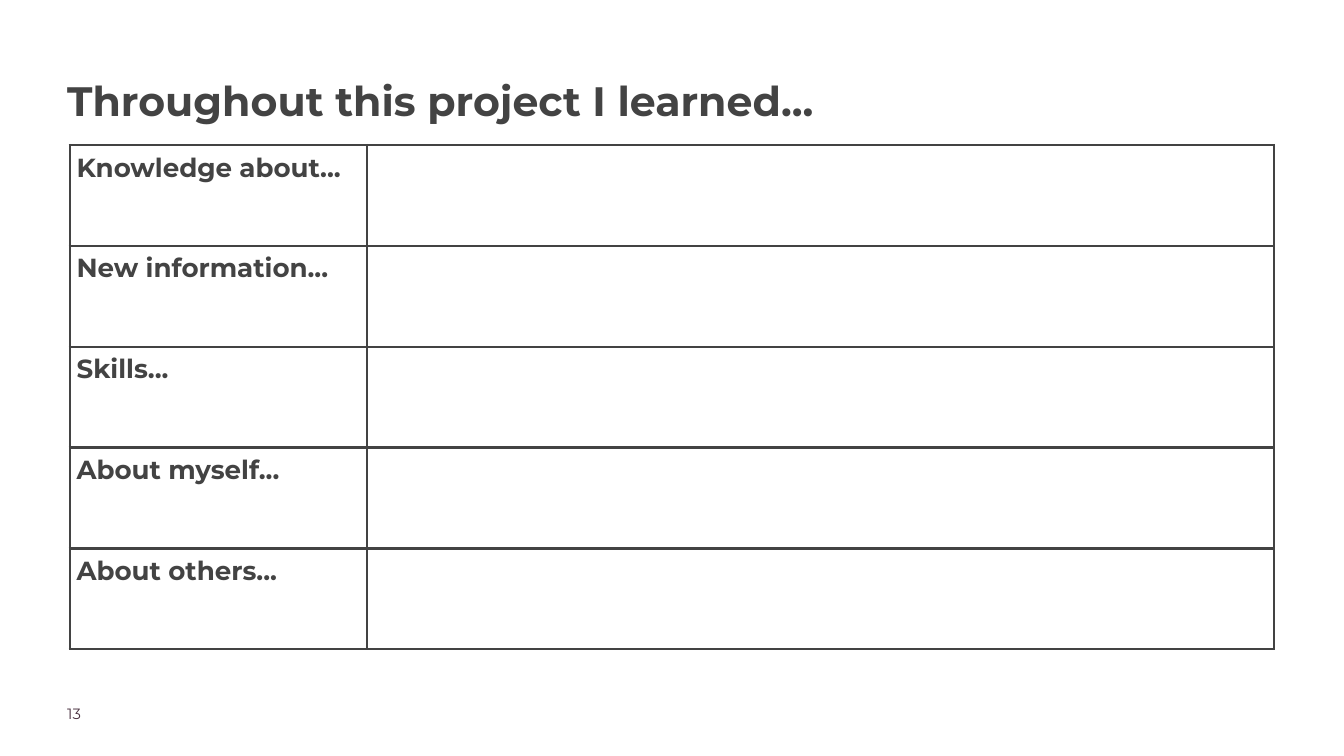
from dataclasses import dataclass

from lxml import etree
from pptx import Presentation
from pptx.dml.color import RGBColor
from pptx.enum.text import MSO_ANCHOR, PP_ALIGN
from pptx.oxml.ns import qn
from pptx.util import Inches, Pt

LEFT = PP_ALIGN.LEFT
TOP = MSO_ANCHOR.TOP
MIDDLE = MSO_ANCHOR.MIDDLE
FACE = "Montserrat"
GREY = "434343"
PLUM = "4B3241"
TOPICS = [
    "Knowledge about...",
    "New information...",
    "Skills...",
    "About myself...",
    "About others...",
]
COLS = [4.42, 13.5]
ROW = 1.5


@dataclass
class Style:
    size: float
    color: str
    bold: bool = False


HEAD = Style(44, GREY, True)
LABEL = Style(28, GREY, True)
PAGE = Style(16, PLUM)


def rgb(code: str) -> RGBColor:
    return RGBColor.from_string(code)


def write(frame, text: str, style: Style, inset: float = 0, anchor=TOP) -> None:
    """Put one styled line of text into a frame."""
    frame.word_wrap = True
    frame.vertical_anchor = anchor
    frame.margin_left = frame.margin_right = Inches(inset)
    frame.margin_top = frame.margin_bottom = Inches(inset)
    para = frame.paragraphs[0]
    para.text = text
    para.alignment = LEFT
    font = para.font
    font.name, font.size, font.bold = FACE, Pt(style.size), style.bold
    font.color.rgb = rgb(style.color)


def border(cell, color: str, width: float) -> None:
    """Line all four sides of a cell."""
    props = cell._tc.get_or_add_tcPr()
    for spot, side in enumerate(("a:lnL", "a:lnR", "a:lnT", "a:lnB")):
        line = etree.Element(qn(side), w=str(Pt(width)))
        fill = etree.SubElement(line, qn("a:solidFill"))
        etree.SubElement(fill, qn("a:srgbClr"), val=color)
        props.insert(spot, line)


def add_grid(slide, left: float, top: float) -> None:
    """Draw the table with a topic and an open answer on each row."""
    count = len(TOPICS)
    table = slide.shapes.add_table(
        count, len(COLS), Inches(left), Inches(top),
        Inches(sum(COLS)), Inches(ROW * count),
    ).table
    table.first_row = table.horz_banding = False
    for col, width in zip(table.columns, COLS):
        col.width = Inches(width)
    for row, topic in zip(table.rows, TOPICS):
        row.height = Inches(ROW)
        for cell in row.cells:
            cell.fill.background()
            border(cell, GREY, 3)
        label = row.cells[0]
        write(label.text_frame, topic, LABEL)
        label.margin_left = label.margin_right = Inches(0.1)
        label.margin_top = label.margin_bottom = Inches(0.1)


def main() -> None:
    deck = Presentation()
    deck.slide_width, deck.slide_height = Inches(20), Inches(11.25)
    slide = deck.slides.add_slide(deck.slide_layouts[5])
    slide.background.fill.solid()
    slide.background.fill.fore_color.rgb = rgb("FFFFFF")

    # Title
    title = slide.shapes.title
    title.left, title.top = Inches(1), Inches(0.97)
    title.width, title.height = Inches(14.44), Inches(0.93)
    write(title.text_frame, "Throughout this project I learned...", HEAD, anchor=MIDDLE)
    title.text_frame.paragraphs[0].line_spacing = 1.15

    # Table of topics
    add_grid(slide, 1.04, 2.16)

    # Page number
    page = slide.shapes.add_textbox(Inches(1), Inches(10.48), Inches(1.57), Inches(0.39))
    write(page.text_frame, "13", PAGE)

    deck.save("out.pptx")


if __name__ == "__main__":
    main()
